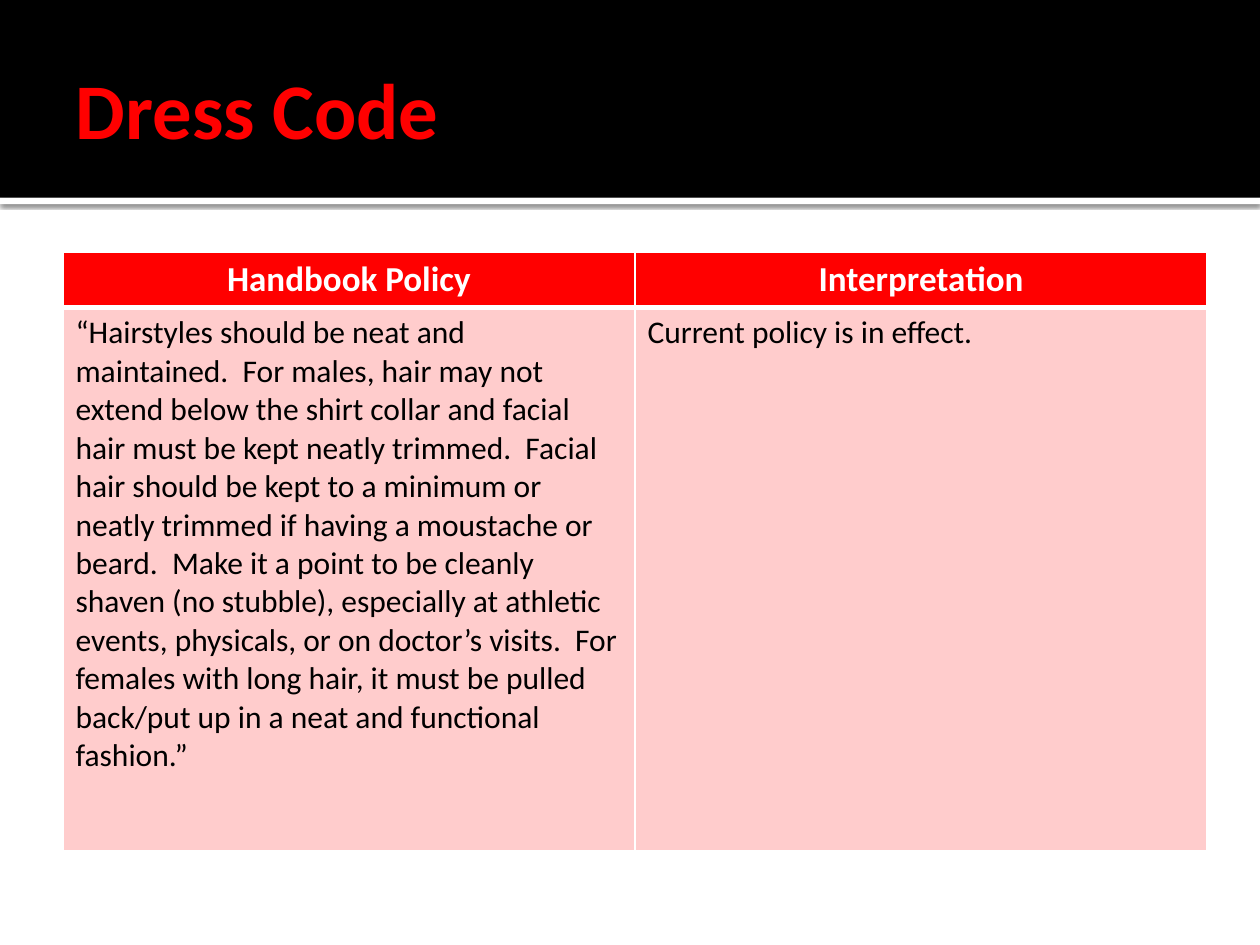
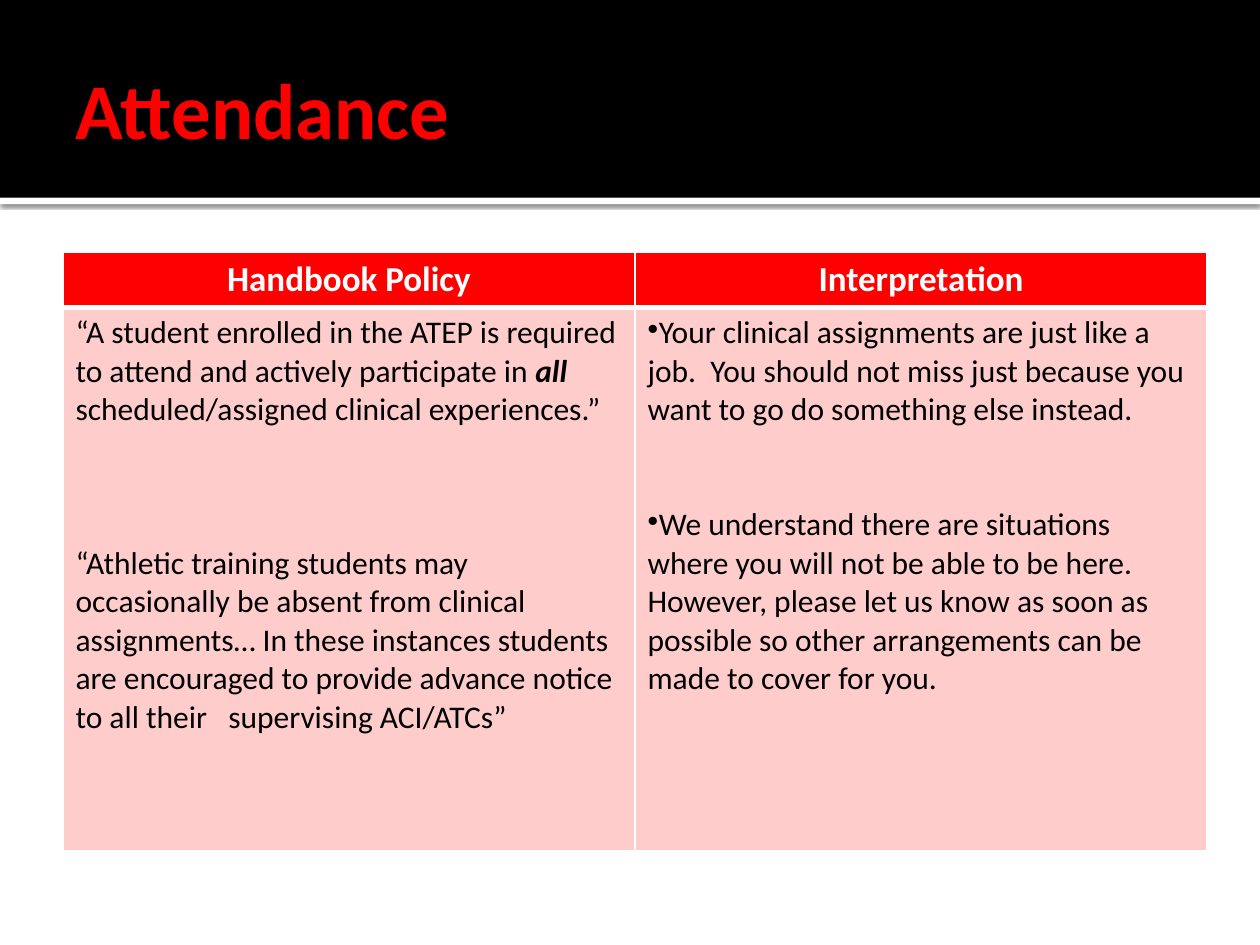
from lxml import etree
from pptx import Presentation, util as u
from pptx.dml.color import RGBColor
from pptx.enum import shapes, text
from pptx.oxml import ns

# Content: each body paragraph is (blank lines above, bulleted, [(words, emphasised), ...])
HEADINGS = ("Handbook Policy", "Interpretation")
SLIDES = [
    ("Dress Code", (
        [(0, False, [(
            "“Hairstyles should be neat and maintained.  For males, hair may not extend "
            "below the shirt collar and facial hair must be kept neatly trimmed.  Facial "
            "hair should be kept to a minimum or neatly trimmed if having a moustache or "
            "beard.  Make it a point to be cleanly shaven (no stubble), especially at "
            "athletic events, physicals, or on doctor’s visits.  For females with long "
            "hair, it must be pulled back/put up in a neat and functional fashion.”", False)])],
        [(0, False, [("Current policy is in effect.", False)])],
    )),
    ("Attendance", (
        [(0, False, [
            ("“A student enrolled in the ATEP is required to attend and actively "
             "participate in ", False),
            ("all", True),
            (" scheduled/assigned clinical experiences.”", False)]),
         (3, False, [(
            "“Athletic training students may occasionally be absent from clinical "
            "assignments… In these instances students are encouraged to provide advance "
            "notice to all their   supervising ACI/ATCs”", False)])],
        [(0, True, [(
            "Your clinical assignments are just like a job.  You should not miss just "
            "because you want to go do something else instead.", False)]),
         (2, True, [(
            "We understand there are situations where you will not be able to be here.  "
            "However, please let us know as soon as possible so other arrangements can be "
            "made to cover for you.", False)])],
    )),
]

# Shared style
FONT = "Calibri"
BLACK, WHITE, RED, PINK = "000000", "FFFFFF", "FF0000", "FFCCCC"
TITLE_SIZE, HEADING_SIZE, BODY_SIZE = 45, 20, 18
LINE_HEIGHT = 1.22 * BODY_SIZE

# Shared geometry, in inches
WIDTH, HEIGHT = 10, 7.5
BAND_HEIGHT, STRIPE_HEIGHT = 1.57, 0.05
TITLE_BOX = (0.5, 0.17, 9, 1.37)
TABLE_LEFT, TABLE_TOP, COLUMN_WIDTH = 0.5, 2, 4.54
ROW_HEIGHTS = (0.44, 4.31)


def color(value):
    return RGBColor.from_string(value)


def inches(*lengths):
    return [u.Inches(length) for length in lengths]


def format_run(run, size, fill, bold=False, italic=False):
    font = run.font
    font.name, font.size, font.bold, font.italic = FONT, u.Pt(size), bold, italic
    font.color.rgb = color(fill)


def add_bar(slide, top, height, fill):
    bar = slide.shapes.add_shape(shapes.MSO_SHAPE.RECTANGLE, *inches(0, top, WIDTH, height))
    bar.fill.solid()
    bar.fill.fore_color.rgb = color(fill)
    bar.line.fill.background()
    bar.shadow.inherit = False
    return bar


def add_shadow(bar):
    effects = bar.element.spPr.find(ns.qn("a:effectLst"))
    shadow = etree.SubElement(effects, ns.qn("a:outerShdw"), blurRad=str(u.Pt(2.5)),
                              dist=str(u.Pt(0.8)), dir="5400000", rotWithShape="0")
    tint = etree.SubElement(shadow, ns.qn("a:srgbClr"), val=BLACK)
    etree.SubElement(tint, ns.qn("a:alpha"), val="60000")


def move_to_layout(slide, bars):
    """Place the bars, back to front, behind everything on the slide's layout."""
    tree = slide.slide_layout.shapes.element
    for index, bar in enumerate(bars):
        tree.insert(2 + index, bar.element)


def add_title(slide, words):
    title = slide.shapes.title
    title.left, title.top, title.width, title.height = inches(*TITLE_BOX)
    frame = title.text_frame
    frame.text = words
    frame.vertical_anchor = text.MSO_ANCHOR.MIDDLE
    frame.margin_left = u.Inches(0.1)
    frame.margin_right = frame.margin_top = frame.margin_bottom = u.Inches(0.05)
    frame.paragraphs[0].alignment = text.PP_ALIGN.LEFT
    format_run(frame.paragraphs[0].runs[0], TITLE_SIZE, RED, bold=True)


def style_cell(cell, fill, top=1, bottom=1):
    cell.fill.solid()
    cell.fill.fore_color.rgb = color(fill)
    properties = cell._tc.get_or_add_tcPr()
    # Borders come before the fill
    for index, (side, width) in enumerate((("L", 1), ("R", 1), ("T", top), ("B", bottom))):
        line = etree.Element(ns.qn(f"a:ln{side}"), w=str(u.Pt(width)))
        solid = etree.SubElement(line, ns.qn("a:solidFill"))
        etree.SubElement(solid, ns.qn("a:srgbClr"), val=WHITE)
        properties.insert(index, line)


def fill_heading(cell, words):
    cell.text_frame.text = words
    paragraph = cell.text_frame.paragraphs[0]
    paragraph.alignment = text.PP_ALIGN.CENTER
    format_run(paragraph.runs[0], HEADING_SIZE, WHITE, bold=True)
    style_cell(cell, RED, bottom=3)


def fill_body(cell, paragraphs):
    frame = cell.text_frame
    for index, (gap, bulleted, pieces) in enumerate(paragraphs):
        paragraph = frame.add_paragraph() if index else frame.paragraphs[0]
        paragraph.space_before = u.Pt(gap * LINE_HEIGHT)
        if bulleted:
            properties = paragraph._p.get_or_add_pPr()
            properties.set("marL", "0")
            properties.set("indent", "0")
            etree.SubElement(properties, ns.qn("a:buChar"), char="•")
        for words, emphasised in pieces:
            run = paragraph.add_run()
            run.text = words
            format_run(run, BODY_SIZE, BLACK, emphasised, emphasised)
    style_cell(cell, PINK, top=3)


def add_policy_table(slide, bodies):
    frame = slide.shapes.add_table(
        len(ROW_HEIGHTS), len(HEADINGS),
        *inches(TABLE_LEFT, TABLE_TOP, COLUMN_WIDTH * len(HEADINGS), sum(ROW_HEIGHTS)))
    table = frame.table
    table.horz_banding = False
    for row, height in zip(table.rows, ROW_HEIGHTS):
        row.height = u.Inches(height)
    for index, (heading, body) in enumerate(zip(HEADINGS, bodies)):
        table.columns[index].width = u.Inches(COLUMN_WIDTH)
        fill_heading(table.cell(0, index), heading)
        fill_body(table.cell(1, index), body)


def main():
    presentation = Presentation()
    presentation.slide_width, presentation.slide_height = inches(WIDTH, HEIGHT)
    title_only = presentation.slide_layouts[5]
    for title, bodies in SLIDES:
        slide = presentation.slides.add_slide(title_only)
        add_title(slide, title)
        add_policy_table(slide, bodies)

    # Band and shadowed stripe, shared through the layout
    first = presentation.slides[0]
    stripe = add_bar(first, BAND_HEIGHT, STRIPE_HEIGHT, WHITE)
    add_shadow(stripe)
    band = add_bar(first, 0, BAND_HEIGHT, BLACK)
    move_to_layout(first, (stripe, band))
    presentation.save("out.pptx")


if __name__ == "__main__":
    main()
